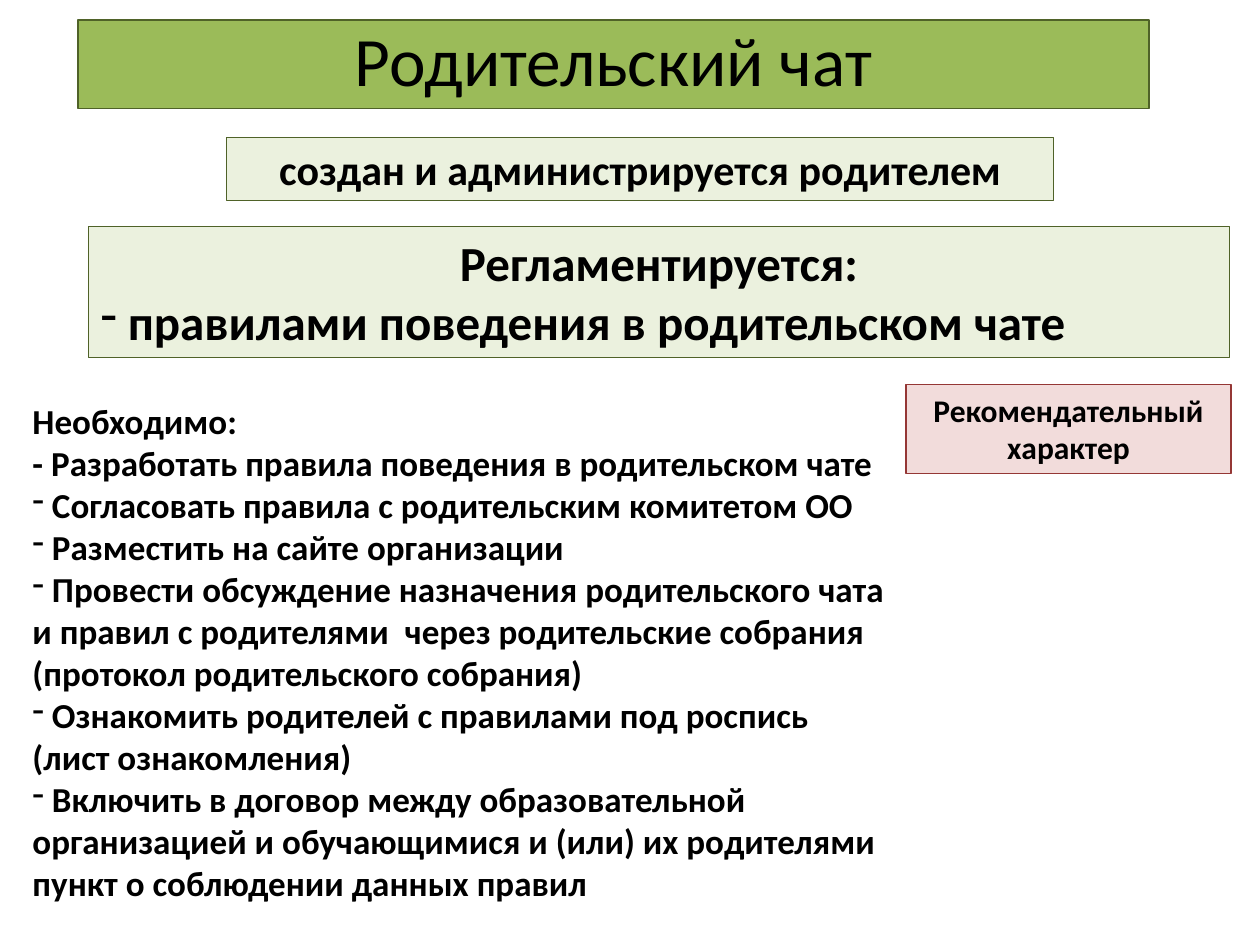
from dataclasses import dataclass
from typing import Optional

from lxml.etree import SubElement
from pptx import Presentation
from pptx.dml.color import RGBColor
from pptx.enum.shapes import MSO_SHAPE as Shape
from pptx.enum.text import MSO_ANCHOR as Anchor, MSO_AUTO_SIZE as AutoSize, PP_ALIGN as Align
from pptx.oxml.ns import qn
from pptx.util import Inches, Pt

BLACK = RGBColor(0x00, 0x00, 0x00)
GREEN = RGBColor(0x9B, 0xBB, 0x59)
PALE_GREEN = RGBColor(0xEB, 0xF1, 0xDE)
DARK_GREEN = RGBColor(0x4F, 0x62, 0x28)
PALE_RED = RGBColor(0xF2, 0xDC, 0xDB)
DARK_RED = RGBColor(0x95, 0x37, 0x35)


@dataclass
class Line:
    text: str
    align: Align = Align.LEFT
    bullet: bool = False


@dataclass
class Block:
    left: float
    top: float
    width: float
    height: float
    size: float
    lines: list[Line]
    fill: Optional[RGBColor] = None
    border: Optional[RGBColor] = None
    bold: bool = True
    anchor: Anchor = Anchor.TOP
    spacing: float = 1.0


def centred(text: str) -> Line:
    return Line(text, Align.CENTER)


def dashed(text: str) -> Line:
    return Line(" " + text, bullet=True)


def add_dash(paragraph) -> None:
    properties = paragraph._p.get_or_add_pPr()
    SubElement(properties, qn("a:buFontTx"))
    SubElement(properties, qn("a:buChar")).set("char", "-")


def draw_block(slide, block: Block) -> None:
    place = [Inches(v) for v in (block.left, block.top, block.width, block.height)]
    if block.fill is None:
        box = slide.shapes.add_textbox(*place)
    else:
        box = slide.shapes.add_shape(Shape.RECTANGLE, *place)
        box.shadow.inherit = False
        box.fill.solid()
        box.fill.fore_color.rgb = block.fill
        box.line.color.rgb = block.border
        box.line.width = Pt(0.75)

    frame = box.text_frame
    frame.word_wrap = True
    frame.vertical_anchor = block.anchor
    if block.anchor == Anchor.TOP:
        frame.auto_size = AutoSize.SHAPE_TO_FIT_TEXT
    frame.text = "\n".join(line.text for line in block.lines)
    for paragraph, line in zip(frame.paragraphs, block.lines):
        paragraph.alignment = line.align
        paragraph.line_spacing = block.spacing
        if line.bullet:
            add_dash(paragraph)
        for run in paragraph.runs:
            run.font.name = "Calibri"
            run.font.size = Pt(block.size)
            run.font.bold = block.bold
            run.font.color.rgb = BLACK


BLOCKS = [
    # Title
    Block(0.62, 0.16, 8.5, 0.7, 39.6, [centred("Родительский чат")],
          GREEN, DARK_GREEN, bold=False, anchor=Anchor.MIDDLE, spacing=0.9),
    # Who runs the chat
    Block(1.8, 1.09, 6.56, 0.5, 24, [centred("создан и администрируется родителем")],
          PALE_GREEN, DARK_GREEN),
    # What governs it
    Block(0.7, 1.8, 9.06, 1.04, 28,
          [centred("Регламентируется:"), dashed("правилами поведения в родительском чате")],
          PALE_GREEN, DARK_GREEN),
    # Status of the rules
    Block(7.19, 3.05, 2.58, 0.71, 18, [centred("Рекомендательный характер")],
          PALE_RED, DARK_RED),
    # Required steps
    Block(0.16, 3.12, 7.03, 4.14, 20, [
        Line("Необходимо:"),
        Line("- Разработать правила поведения в родительском чате"),
        dashed("Согласовать правила с родительским комитетом ОО"),
        dashed("Разместить на сайте организации"),
        dashed("Провести обсуждение назначения родительского чата и правил с родителями  "
               "через родительские собрания (протокол родительского собрания)"),
        dashed("Ознакомить родителей с правилами под роспись (лист ознакомления)"),
        dashed("Включить в договор между образовательной организацией и обучающимися "
               "и (или) их родителями пункт о соблюдении данных правил"),
    ]),
]


def main() -> None:
    deck = Presentation()
    deck.slide_width, deck.slide_height = Inches(10), Inches(7.5)
    slide = deck.slides.add_slide(deck.slide_layouts[6])
    for block in BLOCKS:
        draw_block(slide, block)
    deck.save("out.pptx")


if __name__ == "__main__":
    main()
